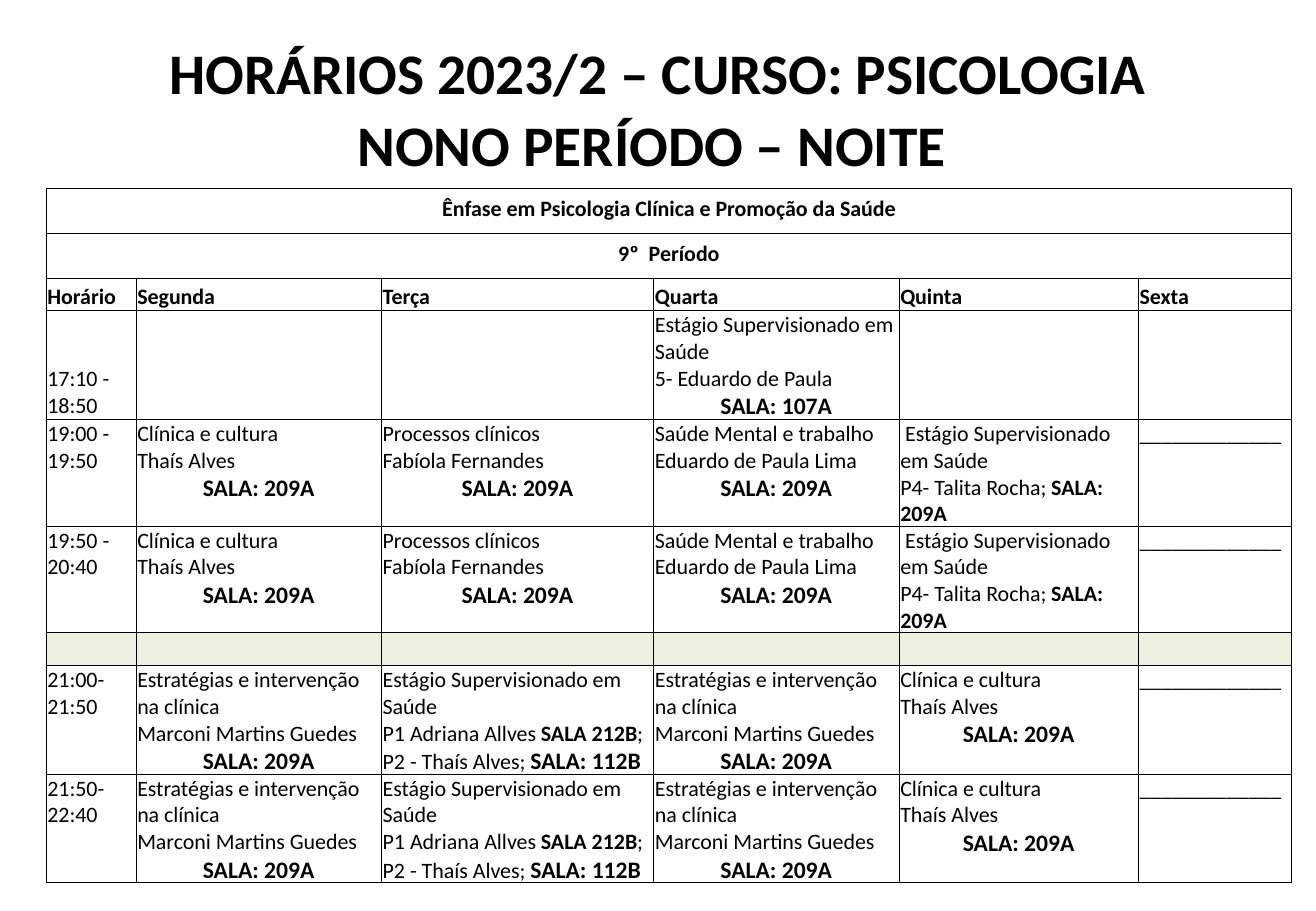
import copy
import pptx
import pptx.dml.color
import pptx.enum.text
import pptx.oxml
import pptx.oxml.ns
import pptx.util
from pptx.util import Inches, Pt

BLACK = pptx.dml.color.RGBColor(0x00, 0x00, 0x00)
PALE_GREEN = pptx.dml.color.RGBColor(0xEB, 0xF1, 0xDE)
ALIGN = pptx.enum.text.PP_ALIGN
ANCHOR = pptx.enum.text.MSO_ANCHOR
FONT = "Calibri"


def plain(text):
    return (text, 13, False)


def strong(text, size=13):
    return (text, size, True)


def line(*spans):
    return (ALIGN.LEFT, spans)


def centred(*spans):
    return (ALIGN.CENTER, spans)


def lesson(text, room):
    return [line(plain(text)), centred(strong(f"SALA: {room}", 14))]


TITLE = ["HORÁRIOS 2023/2 – CURSO: PSICOLOGIA", "NONO PERÍODO – NOITE "]
BANNERS = ["Ênfase em Psicologia Clínica e Promoção da Saúde", "9º  Período"]
DAYS = ["Horário", "Segunda", "Terça", "Quarta", "Quinta", "Sexta"]

EMPTY = [line()]
FREE = [line(plain("_____________"))]
CULTURE = lesson("Clínica e cultura\nThaís Alves", "209A")
PROCESSES = lesson("Processos clínicos\nFabíola Fernandes", "209A")
WORK = lesson("Saúde Mental e trabalho\nEduardo de Paula Lima", "209A")
STRATEGIES = lesson("Estratégias e intervenção na clínica\nMarconi Martins Guedes", "209A")
HEALTH = lesson("Estágio Supervisionado em Saúde \n5- Eduardo de Paula", "107A")
HEALTH_P4 = [line(plain(" Estágio Supervisionado em Saúde \nP4- Talita Rocha; "),
                  strong("SALA: 209A"))]
HEALTH_P1_P2 = [line(plain("Estágio Supervisionado em Saúde \nP1 Adriana Allves "),
                     strong("SALA 212B"), plain("; P2 - Thaís Alves; "),
                     strong("SALA: 112B", 14))]
EARLY = [CULTURE, PROCESSES, WORK, HEALTH_P4, FREE]
LATE = [STRATEGIES, HEALTH_P1_P2, STRATEGIES, CULTURE, FREE]
TIMETABLE = [
    ("17:10 - 18:50", [EMPTY, EMPTY, HEALTH, EMPTY, EMPTY]),
    ("19:00 - 19:50", EARLY),
    ("19:50 - 20:40", EARLY),
    ("", [EMPTY] * 5),
    ("21:00-21:50", LATE),
    ("21:50-22:40", LATE),
]
COLUMN_WIDTHS = [0.74, 2.02, 2.24, 2.02, 1.97, 1.26]
ROW_HEIGHTS = [0.37, 0.37, 0.27, 0.68, 0.47, 0.47, 0.27, 0.89, 0.89]
BREAK_ROW = 6
BOTTOM_ROWS = (2, 3)
TABLE_HEIGHT = Inches(5.71)


def apply(target, values):
    for name, value in values.items():
        setattr(target, name, value)


def add_span(para, text, size, bold):
    for index, part in enumerate(text.split("\n")):
        if index:
            para.add_line_break()
            para._p[-1].append(copy.deepcopy(span._r.rPr))
        span = para.add_run()
        span.text = part
        apply(span.font, {"name": FONT, "size": Pt(size), "bold": bold})
        span.font.color.rgb = BLACK


def write(frame, paragraphs, **layout):
    for index, (alignment, spans) in enumerate(paragraphs):
        para = frame.add_paragraph() if index else frame.paragraphs[0]
        apply(para, {"alignment": alignment, **layout})
        for span in spans:
            add_span(para, *span)
        if not spans:
            end = pptx.oxml.parse_xml(
                f'<a:endParaRPr {pptx.oxml.ns.nsdecls("a")} sz="1300">'
                f'<a:latin typeface="{FONT}"/></a:endParaRPr>')
            para._p.append(end)


def add_borders(cell):
    properties = cell._tc.get_or_add_tcPr()
    for side in ("lnL", "lnR", "lnT", "lnB"):
        properties.append(pptx.oxml.parse_xml(
            f'<a:{side} {pptx.oxml.ns.nsdecls("a")} w="{Pt(0.5)}">'
            f'<a:solidFill><a:srgbClr val="{BLACK}"/></a:solidFill></a:{side}>'))


def add_title(page):
    box = page.shapes.add_textbox(Inches(0.54), Inches(0.3), Inches(9.75), Inches(1.25))
    apply(box.text_frame, {"word_wrap": True, "vertical_anchor": ANCHOR.MIDDLE})
    write(box.text_frame, [centred(strong(text, 34)) for text in TITLE],
          line_spacing=0.9, space_after=Pt(6))


def add_timetable(page):
    rows = [[[centred(strong(text))]] + [EMPTY] * 5 for text in BANNERS]
    rows.append([[line(strong(day))] for day in DAYS])
    for hours, lessons in TIMETABLE:
        rows.append([[line(plain(hours))] if hours else EMPTY] + lessons)

    holder = page.shapes.add_table(len(rows), len(DAYS), Inches(0.38), Inches(1.55),
                                   Inches(sum(COLUMN_WIDTHS)), TABLE_HEIGHT)
    table = holder.table
    apply(table, {"first_row": False, "horz_banding": False})
    for column, width in zip(table.columns, COLUMN_WIDTHS):
        column.width = Inches(width)
    for row, height in zip(table.rows, ROW_HEIGHTS):
        row.height = Inches(height)
    holder.height = TABLE_HEIGHT

    for row_index, contents in enumerate(rows):
        banner = row_index < len(BANNERS)
        side, top, bottom = (0.11, 0.06, 0.06) if banner else (0.01, 0.01, 0)
        for column_index, paragraphs in enumerate(contents):
            cell = table.cell(row_index, column_index)
            apply(cell, {
                "margin_left": Inches(side), "margin_right": Inches(side),
                "margin_top": Inches(top), "margin_bottom": Inches(bottom),
                "vertical_anchor": ANCHOR.BOTTOM if row_index in BOTTOM_ROWS else ANCHOR.TOP,
            })
            add_borders(cell)
            if row_index == BREAK_ROW:
                cell.fill.solid()
                cell.fill.fore_color.rgb = PALE_GREEN
            else:
                cell.fill.background()
            write(cell.text_frame, paragraphs)
        if banner:
            table.cell(row_index, 0).merge(table.cell(row_index, len(DAYS) - 1))


def main():
    deck = pptx.Presentation()
    apply(deck, {"slide_width": Inches(10.83), "slide_height": Inches(7.5)})
    page = deck.slides.add_slide(deck.slide_layouts[6])
    add_title(page)
    add_timetable(page)
    deck.save("out.pptx")


if __name__ == "__main__":
    main()
